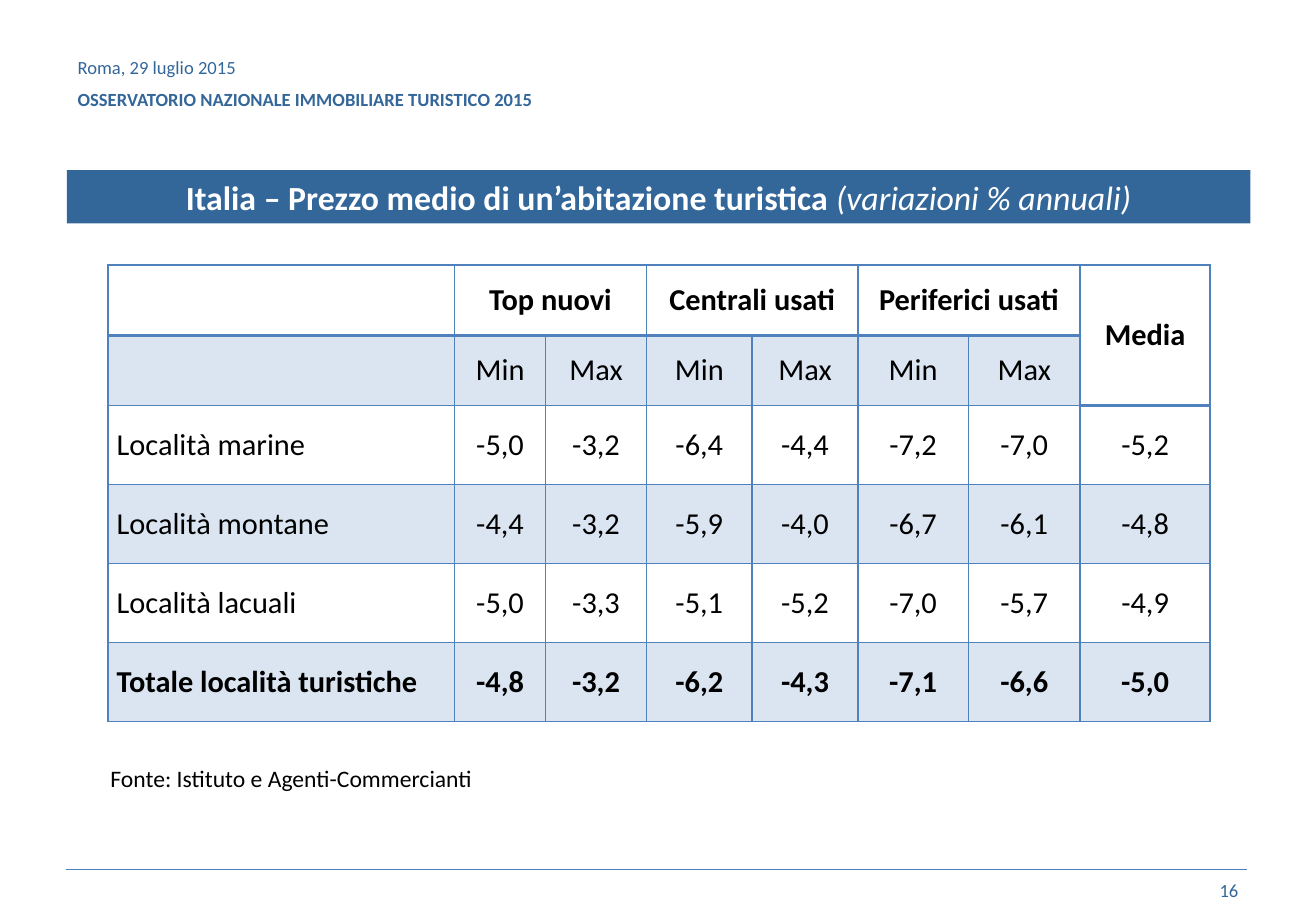
import dataclasses
import pptx
import pptx.dml.color
import pptx.enum.shapes
import pptx.enum.text
import pptx.oxml
import pptx.oxml.ns
import pptx.util
from pptx.util import Inches

ALIGN = pptx.enum.text.PP_ALIGN
MIDDLE = pptx.enum.text.MSO_ANCHOR.MIDDLE
GROW = pptx.enum.text.MSO_AUTO_SIZE.SHAPE_TO_FIT_TEXT


@dataclasses.dataclass(frozen=True)
class Theme:
    font: str = "Calibri"
    blue: str = "336699"
    grid: str = "4F81BD"
    white: str = "FFFFFF"
    black: str = "000000"
    small: int = 11
    source: int = 14
    table: int = 18
    title: int = 20
    band_opacity: int = 20
    thin: float = 1
    thick: float = 2
    rule: float = 0.25


THEME = Theme()
PRICE_GROUPS = ("Top nuovi", "Centrali usati", "Periferici usati")
PRICE_ROWS = (
    ("Località marine", "-5,0", "-3,2", "-6,4", "-4,4", "-7,2", "-7,0", "-5,2"),
    ("Località montane", "-4,4", "-3,2", "-5,9", "-4,0", "-6,7", "-6,1", "-4,8"),
    ("Località lacuali", "-5,0", "-3,3", "-5,1", "-5,2", "-7,0", "-5,7", "-4,9"),
    ("Totale località turistiche", "-4,8", "-3,2", "-6,2", "-4,3", "-7,1", "-6,6", "-5,0"),
)
COLUMN_WIDTHS = (2.85, 0.75, 0.83, 0.87, 0.87, 0.91, 0.92, 1.07)
ROW_HEIGHTS = (0.58, 0.58, 0.65, 0.65, 0.65, 0.65)


def rgb(value):
    return pptx.dml.color.RGBColor.from_string(value)


def apply(target, values):
    for name, value in values.items():
        setattr(target, name, value)


def add_span(para, text, size, color, **style):
    span = para.add_run()
    span.text = text
    apply(span.font, {"name": THEME.font, "size": pptx.util.Pt(size), **style})
    span.font.color.rgb = rgb(color)


def add_text_box(page, box, **frame_format):
    frame = page.shapes.add_textbox(*map(Inches, box)).text_frame
    apply(frame, {"word_wrap": True, **frame_format})
    return frame


def add_header(page, box):
    frame = add_text_box(page, box, vertical_anchor=MIDDLE)
    add_span(frame.paragraphs[0], "Roma, 29 luglio 2015", THEME.small, THEME.blue)
    para = frame.add_paragraph()
    para.space_before = pptx.util.Pt(6)
    add_span(para, "OSSERVATORIO NAZIONALE IMMOBILIARE TURISTICO 2015",
             THEME.small, THEME.blue, bold=True)


def add_title(page, box):
    banner = page.shapes.add_shape(
        pptx.enum.shapes.MSO_SHAPE.RECTANGLE, *map(Inches, box))
    banner.shadow.inherit = False
    banner.fill.solid()
    banner.fill.fore_color.rgb = rgb(THEME.blue)
    banner.line.fill.background()
    apply(banner.text_frame, {"word_wrap": True, "vertical_anchor": MIDDLE, "auto_size": GROW})
    para = banner.text_frame.paragraphs[0]
    para.alignment = ALIGN.CENTER
    add_span(para, "Italia – Prezzo medio di un’abitazione turistica ",
             THEME.title, THEME.white, bold=True)
    add_span(para, "(variazioni % annuali)", THEME.title, THEME.white,
             bold=False, italic=True)


def set_borders(cell, widths):
    properties = cell._tc.get_or_add_tcPr()
    for side, width in widths.items():
        properties.append(pptx.oxml.parse_xml(
            f'<a:ln{side} {pptx.oxml.ns.nsdecls("a")} w="{pptx.util.Pt(width)}">'
            f'<a:solidFill><a:srgbClr val="{THEME.grid}"/></a:solidFill></a:ln{side}>'))


def set_band(cell, banded):
    if not banded:
        cell.fill.background()
        return
    cell.fill.solid()
    cell.fill.fore_color.rgb = rgb(THEME.grid)
    color = cell._tc.tcPr.find(".//" + pptx.oxml.ns.qn("a:solidFill") + "/"
                               + pptx.oxml.ns.qn("a:srgbClr"))
    for candidate in cell._tc.tcPr.findall(pptx.oxml.ns.qn("a:solidFill")):
        color = candidate[0]
    alpha = pptx.oxml.parse_xml(
        f'<a:alpha {pptx.oxml.ns.nsdecls("a")} val="{THEME.band_opacity * 1000}"/>')
    color.append(alpha)


def price_grid():
    groups = [text for group in PRICE_GROUPS for text in (group, "")]
    return [["", *groups, "Media"],
            ["", *("Min", "Max") * len(PRICE_GROUPS), ""],
            *PRICE_ROWS]


def add_price_table(page, box):
    grid = price_grid()
    last_row, last_column = len(grid) - 1, len(COLUMN_WIDTHS) - 1
    table = page.shapes.add_table(
        len(grid), len(COLUMN_WIDTHS), *map(Inches, box)).table
    apply(table, {"first_row": False, "horz_banding": False})
    for column, width in zip(table.columns, COLUMN_WIDTHS):
        column.width = Inches(width)
    for row, height in zip(table.rows, ROW_HEIGHTS):
        row.height = Inches(height)
    for start in range(1, last_column, 2):
        table.cell(0, start).merge(table.cell(0, start + 1))
    table.cell(0, last_column).merge(table.cell(1, last_column))

    for row, texts in enumerate(grid):
        for column, text in enumerate(texts):
            cell = table.cell(row, column)
            header_rows = 2 if column == last_column else 1
            set_borders(cell, {
                "L": THEME.thin,
                "R": THEME.thin,
                "T": THEME.thick if row == header_rows else THEME.thin,
                "B": THEME.thick if row < header_rows else THEME.thin,
            })
            set_band(cell, row % 2 == 1 and row >= header_rows)
            apply(cell, {"vertical_anchor": MIDDLE,
                         "margin_left": Inches(0.07), "margin_right": Inches(0.07),
                         "margin_top": 0, "margin_bottom": 0})
            if text:
                para = cell.text_frame.paragraphs[0]
                para.alignment = ALIGN.CENTER if column else ALIGN.LEFT
                add_span(para, text, THEME.table, THEME.black,
                         bold=row in (0, last_row))


def add_source(page, box):
    frame = add_text_box(page, box, auto_size=GROW)
    add_span(frame.paragraphs[0], "Fonte: Istituto e Agenti-Commercianti",
             THEME.source, THEME.black)


def add_footer(page, box):
    left, top, width, height = box
    rule = page.shapes.add_connector(
        pptx.enum.shapes.MSO_CONNECTOR.STRAIGHT,
        *map(Inches, (left, top, left + width, top)))
    rule.line.color.rgb = rgb(THEME.grid)
    rule.line.width = pptx.util.Pt(THEME.rule)
    rule._element.spPr.append(pptx.oxml.parse_xml(
        f'<a:effectLst {pptx.oxml.ns.nsdecls("a")}/>'))
    number_width = 2.53
    frame = add_text_box(
        page, (left + width + 0.03 - number_width, top - 0.03, number_width, height),
        vertical_anchor=MIDDLE)
    para = frame.paragraphs[0]
    para.alignment = ALIGN.RIGHT
    add_span(para, "16", THEME.small, THEME.blue)


def main():
    deck = pptx.Presentation()
    apply(deck, {"slide_width": Inches(10.83), "slide_height": Inches(7.5)})
    page = deck.slides.add_slide(deck.slide_layouts[6])
    add_footer(page, (0.54, 7.16, 9.72, 0.4))
    add_header(page, (0.54, 0.3, 8.03, 0.77))
    add_title(page, (0.55, 1.4, 9.74, 0.44))
    add_source(page, (0.81, 6.24, 4.28, 0.34))
    add_price_table(page, (0.89, 2.18, sum(COLUMN_WIDTHS), sum(ROW_HEIGHTS)))
    deck.save("out.pptx")


if __name__ == "__main__":
    main()
